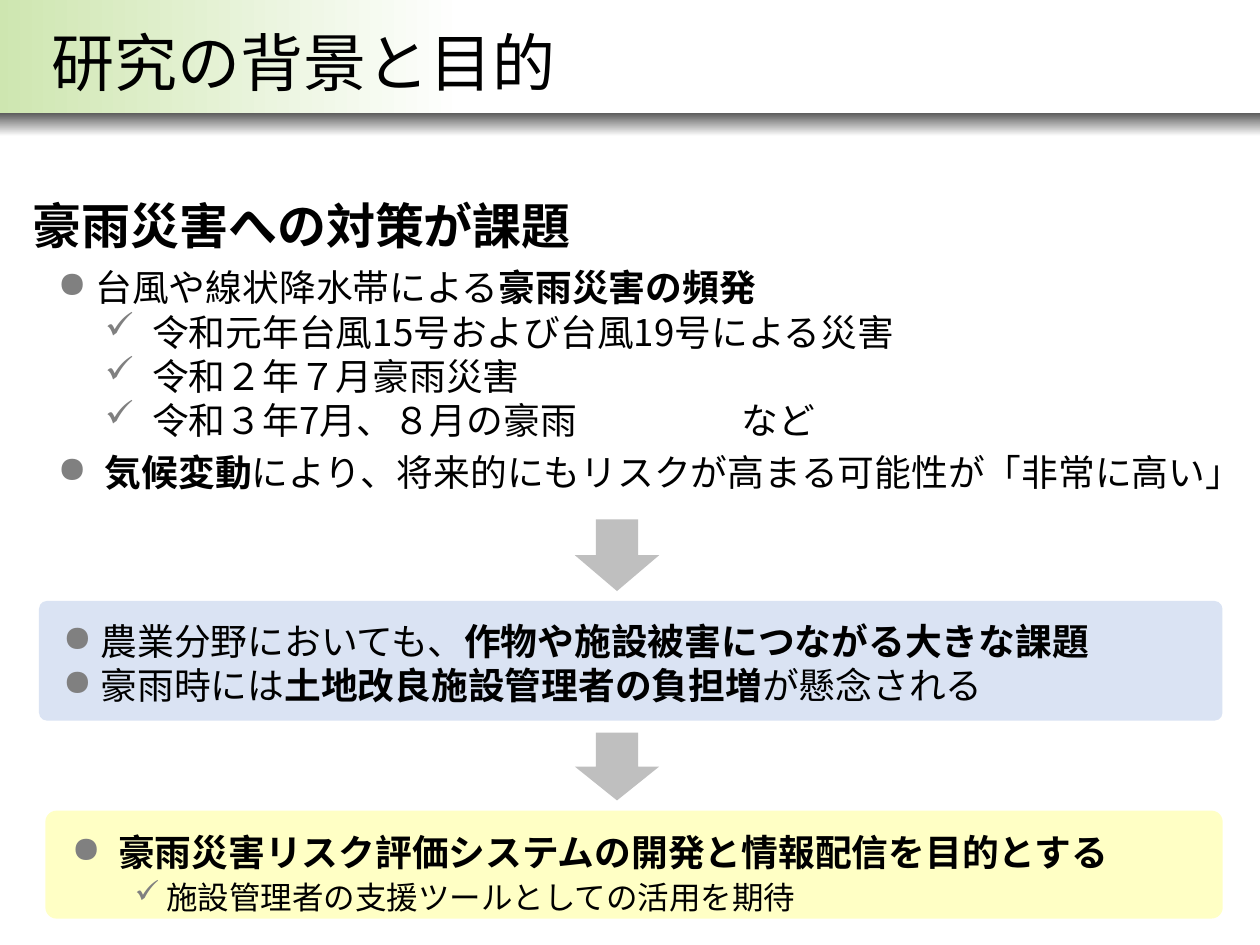
import pptx
import pptx.util
import pptx.dml.color
import pptx.enum.shapes
import pptx.enum.text
import pptx.oxml.ns
import lxml.etree

Pt = pptx.util.Pt
SHAPE = pptx.enum.shapes.MSO_SHAPE
FONT = "Noto Sans CJK JP"
COLORS = {
    "text": "000000", "bullet": "808080", "arrow": "BFBFBF",
    "issue": "DAE3F3", "goal": "FFFFC5", "white": "FFFFFF",
    "green": "CEE6B0", "shade": "5F5F5F",
}

# Content: a paragraph is (style, [(text, bold), ...])
TITLE = [("title", [("研究の背景と目的", False)])]
HEADING = [("heading", [("豪雨災害への対策が課題", True)])]
BACKGROUND = [
    ("point", [("台風や線状降水帯による", False), ("豪雨災害の頻発", True)]),
    ("check", [("令和元年台風15号および台風19号による災害", False)]),
    ("check", [("令和２年７月豪雨災害", False)]),
    ("check", [("令和３年7月、８月の豪雨\tなど", False)]),
    ("climate", [("気候変動", True),
                 ("により、将来的にもリスクが高まる可能性が「非常に高い」", False)]),
]
ISSUES = [
    ("point", [("農業分野においても、", False),
               ("作物や施設被害につながる大きな課題", True)]),
    ("point", [("豪雨時には", False), ("土地改良施設管理者の負担増", True),
               ("が懸念される", False)]),
]
GOALS = [
    ("goal", [("豪雨災害リスク評価システムの開発と情報配信を目的とする", True)]),
    ("support", [("施設管理者の支援ツールとしての活用を期待", False)]),
]

# Paragraph styles: size, line pitch, space before, level, bullet, margin, hanging, tab
STYLES = {
    "title": (36, 39, 0, 0, None, 0, 0, None),
    "heading": (28, 33.6, 0, 0, None, 0, 0, None),
    "point": (21, 25.2, 0, 0, "●", 21.6, 21.6, None),
    "check": (21, 25.2, 0, 1, "✓", 54, 27, 391),
    "climate": (21, 25.2, 4.5, 0, "●", 27, 27, None),
    "goal": (21, 22.7, 0, 0, "●", 26.6, 26.6, None),
    "support": (18, 19.4, 5, 1, "✓", 54, 18, None),
}

# Places: left, top, width, height
TITLE_AT = (22.3, 14, 394.6, 46)
TEXTS = [
    (HEADING, (11.5, 108.4, 469.4, 41)),
    (BACKGROUND, (25.9, 148, 696.2, 139.7)),
    (ISSUES, (28.8, 349.8, 678.2, 58.3)),
    (GOALS, (33.8, 472.9, 666, 49.7)),
]
BANDS = [  # place, gradient stops, angle
    ((-2, -2, 722, 66.8), [(0.63, "white"), (1, "green")], 180),
    ((0, 64.8, 720, 13), [(0, "shade"), (1, "white")], 270),
]
PANELS = [
    ("issue", (22.3, 343.4, 676.3, 68.4), 0.067),
    ("goal", (25.9, 463.2, 672.8, 61.7), 0.104),
]
ARROWS = [(328.5, 296.8, 48.2, 41), (328.5, 418.7, 48.2, 38.7)]


def rgb(name):
    return pptx.dml.color.RGBColor.from_string(COLORS[name])


def add_child(parent, tag, **attributes):
    return lxml.etree.SubElement(parent, pptx.oxml.ns.qn(tag), attributes)


def add_plain_shape(slide, kind, place):
    shape = slide.shapes.add_shape(kind, *map(Pt, place))
    shape.shadow.inherit = False
    shape.line.fill.background()
    return shape


def add_filled_shape(slide, kind, place, color):
    shape = add_plain_shape(slide, kind, place)
    shape.fill.solid()
    shape.fill.fore_color.rgb = rgb(color)
    return shape


def format_paragraph(para, style):
    size, pitch, before, level, bullet, margin, hanging, tab = STYLES[style]
    para.alignment = pptx.enum.text.PP_ALIGN.LEFT
    para.level = level
    para.line_spacing = Pt(pitch)
    para.space_before = Pt(before)
    para.space_after = Pt(0)
    properties = para._p.get_or_add_pPr()
    properties.set("marL", str(Pt(margin)))
    properties.set("indent", str(-Pt(hanging)))
    if bullet:
        color = add_child(properties, "a:buClr")
        add_child(color, "a:srgbClr", val=COLORS["bullet"])
        add_child(properties, "a:buFont", typeface="OpenSymbol")
        add_child(properties, "a:buChar", char=bullet)
    else:
        add_child(properties, "a:buNone")
    if tab:
        stops = add_child(properties, "a:tabLst")
        add_child(stops, "a:tab", pos=str(Pt(tab)), algn="l")
    return size


def write_text(box, paragraphs):
    frame = box.text_frame
    frame.word_wrap = True
    frame.auto_size = pptx.enum.text.MSO_AUTO_SIZE.NONE
    frame.vertical_anchor = pptx.enum.text.MSO_ANCHOR.TOP
    for number, (style, pieces) in enumerate(paragraphs):
        para = frame.add_paragraph() if number else frame.paragraphs[0]
        size = format_paragraph(para, style)
        for text, bold in pieces:
            span = para.add_run()
            span.text = text
            span.font.size = Pt(size)
            span.font.bold = bold
            span.font.color.rgb = rgb("text")
            span.font.name = FONT
            add_child(span._r.get_or_add_rPr(), "a:ea", typeface=FONT)


def main():
    deck = pptx.Presentation()
    deck.slide_width, deck.slide_height = Pt(720), Pt(540)
    slide = deck.slides.add_slide(deck.slide_layouts[5])

    # Header bands
    for place, stops, angle in BANDS:
        band = add_plain_shape(slide, SHAPE.RECTANGLE, place)
        band.fill.gradient()
        band.fill.gradient_angle = angle
        for stop, (position, color) in zip(band.fill.gradient_stops, stops):
            stop.position = position
            stop.color.rgb = rgb(color)

    # Title, in front of the bands
    title = slide.shapes.title
    title.left, title.top, title.width, title.height = map(Pt, TITLE_AT)
    write_text(title, TITLE)
    slide.shapes._spTree.append(title._element)

    # Panels and arrows
    for color, place, rounding in PANELS:
        panel = add_filled_shape(slide, SHAPE.ROUNDED_RECTANGLE, place, color)
        panel.adjustments[0] = rounding
    for place in ARROWS:
        add_filled_shape(slide, SHAPE.DOWN_ARROW, place, "arrow")

    # Texts
    for paragraphs, place in TEXTS:
        write_text(slide.shapes.add_textbox(*map(Pt, place)), paragraphs)

    deck.save("out.pptx")


if __name__ == "__main__":
    main()
